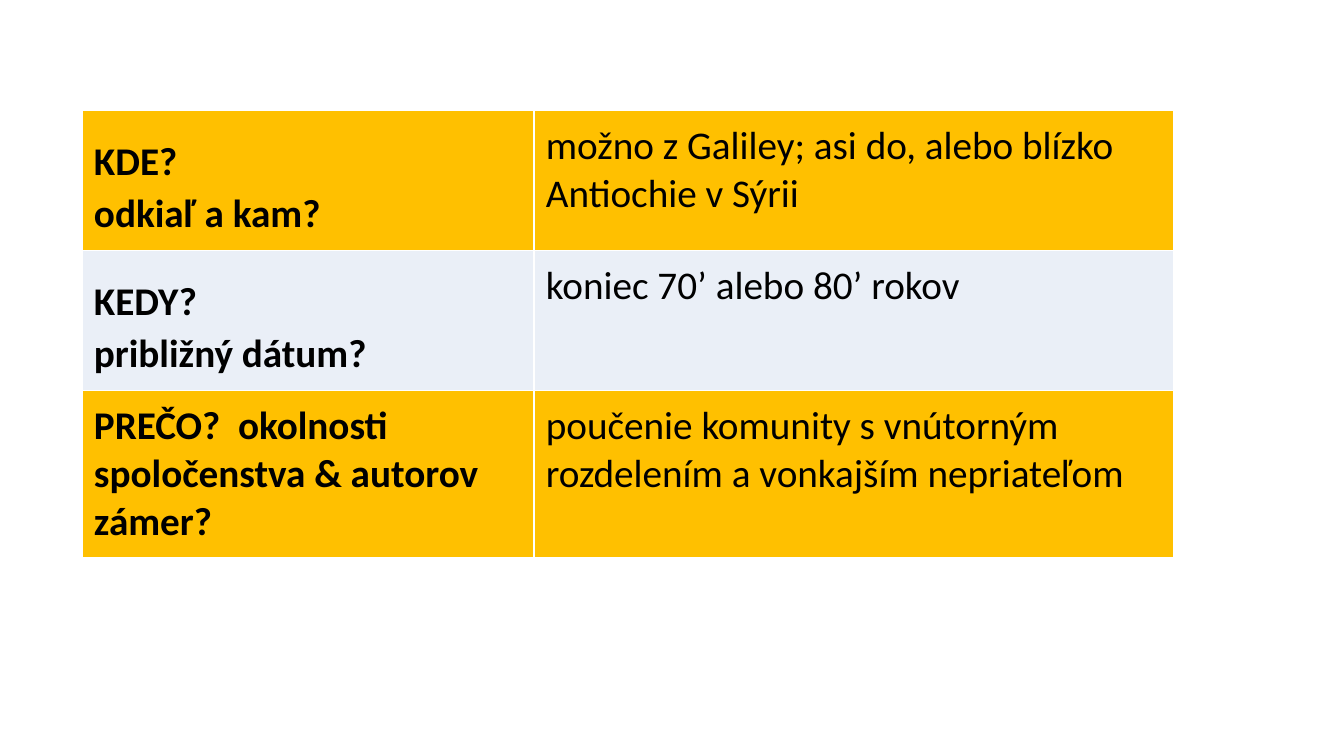
from lxml import etree
from pptx import Presentation
from pptx.dml.color import RGBColor
from pptx.enum.text import MSO_ANCHOR
from pptx.oxml.ns import qn
from pptx.util import Emu, Pt

PX = 914400 / 100.8
TOP = MSO_ANCHOR.TOP
BLANK_LAYOUT = 6

BLACK = RGBColor(0x00, 0x00, 0x00)
WHITE = RGBColor(0xFF, 0xFF, 0xFF)
GOLD = RGBColor(0xFF, 0xC0, 0x00)
PALE_BLUE = RGBColor(0xEA, 0xEF, 0xF7)

COLUMN_WIDTHS = [452, 640]
# Row height, fill, lines of the question, answer
ROWS = [
    (140, GOLD, ["KDE?", "odkiaľ a kam?"],
     "možno z Galiley; asi do, alebo blízko Antiochie v Sýrii"),
    (140, PALE_BLUE, ["KEDY?", "približný dátum?"],
     "koniec 70’ alebo 80’ rokov"),
    (167, GOLD, ["PREČO?  okolnosti spoločenstva & autorov zámer?"],
     "poučenie komunity s vnútorným rozdelením a vonkajším nepriateľom"),
]


def px(length):
    return Emu(round(length * PX))


def add_span(para, text, size=28, bold=False, font="Calibri", color=BLACK):
    span = para.add_run()
    span.text = text
    span.font.size = Pt(size)
    span.font.bold = bold
    span.font.name = font
    span.font.color.rgb = color


class SlideBuilder:
    margin = 12
    break_size = 40

    def __init__(self, deck):
        self.slide = deck.slides.add_slide(deck.slide_layouts[BLANK_LAYOUT])

    def border(self, cell, color=WHITE, width=1):
        properties = cell._tc.get_or_add_tcPr()
        for index, side in enumerate(("lnL", "lnR", "lnT", "lnB")):
            line = etree.Element(qn("a:" + side), w=str(Pt(width)))
            fill = etree.SubElement(line, qn("a:solidFill"))
            etree.SubElement(fill, qn("a:srgbClr"), val=str(color))
            properties.insert(index, line)

    def cell(self, cell, lines, fill, bold):
        cell.margin_left = cell.margin_right = px(self.margin)
        cell.margin_top = cell.margin_bottom = px(self.margin)
        cell.vertical_anchor = TOP
        cell.fill.solid()
        cell.fill.fore_color.rgb = fill
        self.border(cell)
        para = cell.text_frame.paragraphs[0]
        for index, text in enumerate(lines):
            if index:
                # The larger space opens up the line above the break
                add_span(para, " ", size=self.break_size, bold=bold)
                para.add_line_break()
            add_span(para, text, bold=bold)

    def table(self, left, top, widths, rows):
        height = sum(row[0] for row in rows)
        table = self.slide.shapes.add_table(
            len(rows), len(widths), px(left), px(top),
            px(sum(widths)), px(height)).table
        table.first_row = False
        table.horz_banding = False
        for column, width in zip(table.columns, widths):
            column.width = px(width)
        for index, (row_height, fill, question, answer) in enumerate(rows):
            table.rows[index].height = px(row_height)
            self.cell(table.cell(index, 0), question, fill, bold=True)
            self.cell(table.cell(index, 1), [answer], fill, bold=False)


def main():
    deck = Presentation()
    deck.slide_width, deck.slide_height = px(1344), px(756)

    # Questions and answers
    SlideBuilder(deck).table(82, 110, COLUMN_WIDTHS, ROWS)

    deck.save("out.pptx")


if __name__ == "__main__":
    main()
